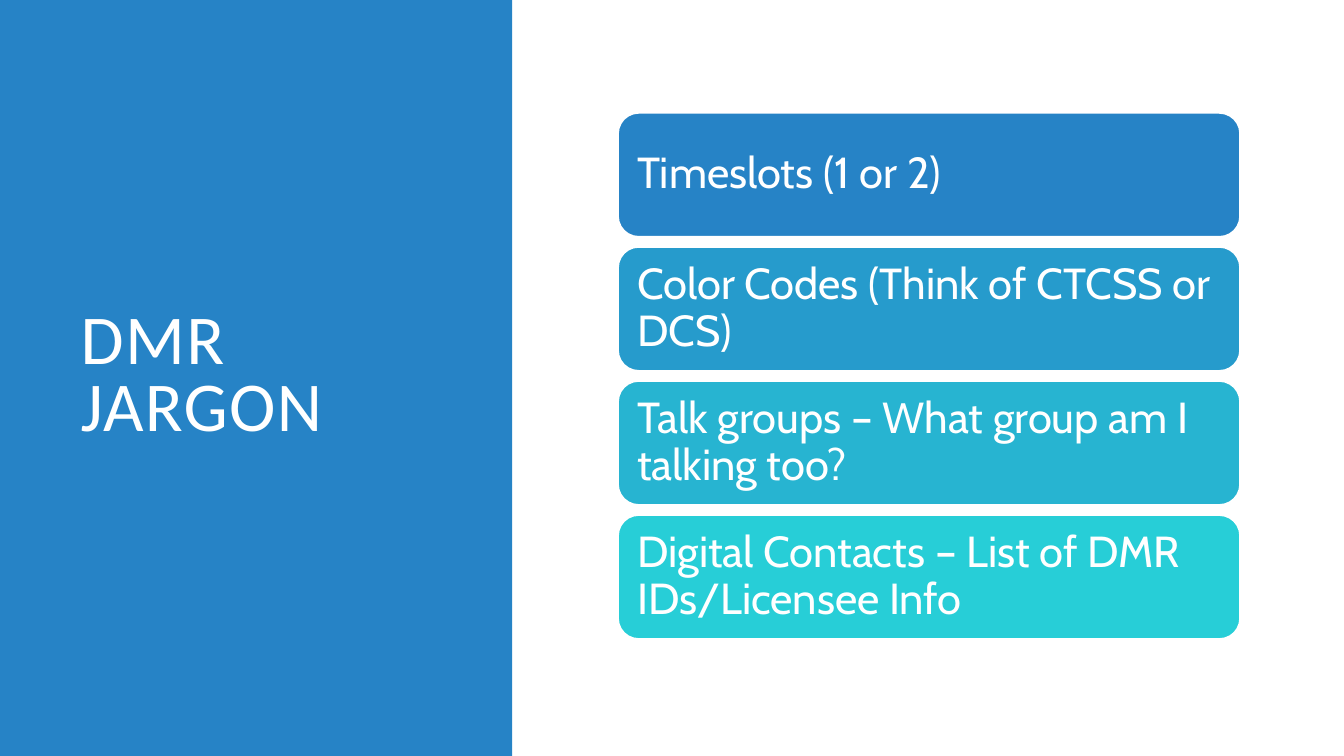
from dataclasses import dataclass

from pptx import Presentation
from pptx.dml.color import RGBColor as Rgb
from pptx.enum.shapes import MSO_SHAPE as Kind
from pptx.enum.text import MSO_ANCHOR as Anchor, MSO_AUTO_SIZE as Fit, PP_ALIGN as Align
from pptx.shapes.autoshape import Shape
from pptx.slide import Slide
from pptx.text.text import TextFrame
from pptx.util import Emu, Pt

SCALE = 9144  # EMU per px, 100 px to the inch
HUES = {
    "white": "FFFFFF",
    "blue": "2683C6",
    "azure": "269BCC",
    "teal": "27B4D1",
    "cyan": "27CED7",
}
LEFT, TOP, WIDTH, HEIGHT, STEP = 613, 112, 617, 123, 133


@dataclass
class Card:
    text: str
    hue: str


CARDS = [
    Card("Timeslots (1 or 2)", "blue"),
    Card("Color Codes (Think of CTCSS or DCS)", "azure"),
    Card("Talk groups – What group am I talking too?", "teal"),
    Card("Digital Contacts – List of DMR IDs/Licensee Info", "cyan"),
]


def px(size: int) -> Emu:
    return Emu(size * SCALE)


def color(name: str) -> Rgb:
    return Rgb.from_string(HUES[name])


def add_box(slide: Slide, kind: Kind, x: int, y: int, w: int, h: int, hue: str) -> Shape:
    box = slide.shapes.add_shape(kind, px(x), px(y), px(w), px(h))
    box.shadow.inherit = False
    box.fill.solid()
    box.fill.fore_color.rgb = color(hue)
    box.line.fill.background()
    return box


def set_text(frame: TextFrame, text: str, face: str, size: int, lead: float) -> None:
    frame.text = text
    frame.word_wrap = True
    frame.auto_size = Fit.NONE
    frame.vertical_anchor = Anchor.MIDDLE
    para = frame.paragraphs[0]
    para.alignment = Align.LEFT
    para.line_spacing = lead
    font = para.runs[0].font
    font.name = face
    font.size = Pt(size)
    font.color.rgb = color("white")


def add_title(slide: Slide) -> None:
    title = slide.shapes.title
    title.left, title.top, title.width, title.height = map(px, (70, 70, 374, 609))
    set_text(title.text_frame, "DMR JARGON", "Calibri", 50, 0.8)
    run = title.text_frame.paragraphs[0].runs[0]
    run.font._element.set("spc", "100")  # letter spacing of 1 pt
    # Side panel, behind the title
    panel = add_box(slide, Kind.RECTANGLE, 0, 0, 508, 750, "blue")
    title.element.addprevious(panel.element)


def add_card(slide: Slide, card: Card, y: int) -> None:
    box = add_box(slide, Kind.ROUNDED_RECTANGLE, LEFT, y, WIDTH, HEIGHT, card.hue)
    box.line.color.rgb = color("white")
    box.line.width = Pt(1.25)
    frame = box.text_frame
    frame.margin_left = frame.margin_right = px(13)
    frame.margin_top = frame.margin_bottom = px(13)
    set_text(frame, card.text, "Cabin", 31, 0.9)


def main() -> None:
    deck = Presentation()
    deck.slide_width, deck.slide_height = px(1333), px(750)
    slide = deck.slides.add_slide(deck.slide_layouts[5])
    add_title(slide)
    # Stack of jargon cards
    for row, card in enumerate(CARDS):
        add_card(slide, card, TOP + row * STEP)
    deck.save("out.pptx")


if __name__ == "__main__":
    main()
